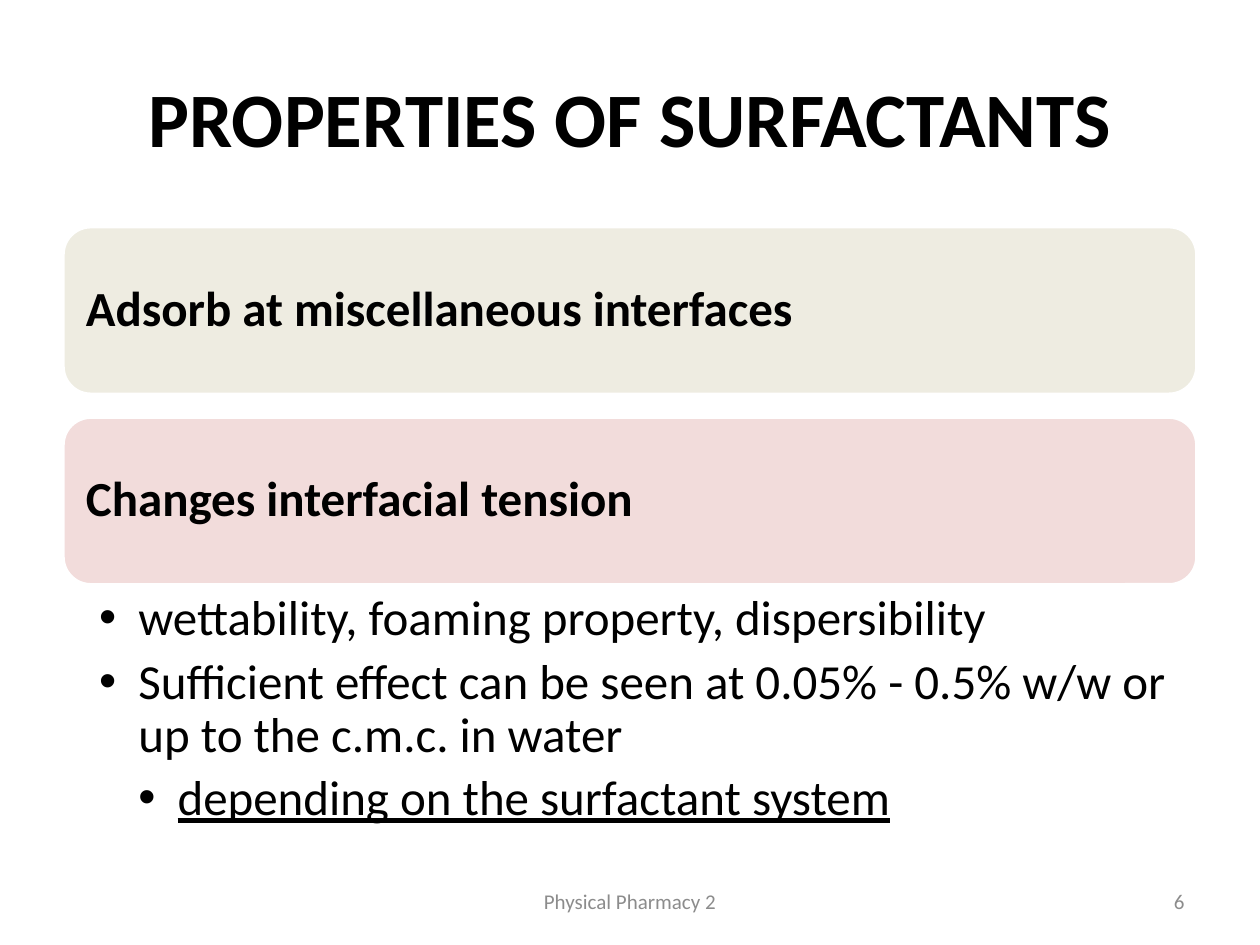
from lxml import etree
from pptx import Presentation
from pptx.dml.color import RGBColor
from pptx.enum.shapes import MSO_SHAPE
from pptx.enum.text import MSO_ANCHOR, MSO_AUTO_SIZE, PP_ALIGN
from pptx.oxml.ns import qn
from pptx.util import Cm, Pt

ROUND = MSO_SHAPE.ROUNDED_RECTANGLE
TOP, MIDDLE = MSO_ANCHOR.TOP, MSO_ANCHOR.MIDDLE
LEFT, CENTER, RIGHT = PP_ALIGN.LEFT, PP_ALIGN.CENTER, PP_ALIGN.RIGHT
NO_FIT = MSO_AUTO_SIZE.NONE

BLACK = RGBColor(0x00, 0x00, 0x00)
WHITE = RGBColor(0xFF, 0xFF, 0xFF)
GRAY = RGBColor(0x8C, 0x8C, 0x8C)
CREAM = RGBColor(0xEE, 0xEC, 0xE1)
PINK = RGBColor(0xF2, 0xDC, 0xDB)

FONT = "Calibri"
EDGE, WIDTH = 1.27, 22.86
CARD_TOP, CARD_STEP, CARD_TALL = 4.57, 3.84, 3.38
INDENT = 0.79

CARDS = [
    ("Adsorb at miscellaneous interfaces", CREAM),
    ("Changes interfacial tension", PINK),
]
POINTS = [
    (1, "wettability, foaming property, dispersibility", False),
    (1, "Sufficient effect can be seen at 0.05% - 0.5% w/w or "
        "up to the c.m.c. in water", False),
    (2, "depending on the surfactant system", True),
]


def place(shape, left, top, width, height):
    shape.left, shape.top = Cm(left), Cm(top)
    shape.width, shape.height = Cm(width), Cm(height)


def set_frame(frame, anchor, left=0.25, right=0.25, edge=0.13):
    frame.word_wrap = True
    frame.auto_size = NO_FIT
    frame.vertical_anchor = anchor
    frame.margin_left, frame.margin_right = Cm(left), Cm(right)
    frame.margin_top = frame.margin_bottom = Cm(edge)


def add_run(para, text, size, color=BLACK, bold=False, under=False):
    run = para.add_run()
    run.text = text
    font = run.font
    font.name, font.size = FONT, Pt(size)
    font.bold, font.underline = bold, under
    font.color.rgb = color


def add_title(slide, text):
    title = slide.shapes.title
    place(title, EDGE, 0.76, WIDTH, 3.18)
    set_frame(title.text_frame, MIDDLE)
    para = title.text_frame.paragraphs[0]
    para.alignment = CENTER
    add_run(para, text, 44, bold=True)


def add_card(slide, top, text, color):
    card = slide.shapes.add_shape(ROUND, Cm(EDGE), Cm(top), Cm(WIDTH), Cm(CARD_TALL))
    card.shadow.inherit = False
    card.fill.solid()
    card.fill.fore_color.rgb = color
    card.line.color.rgb = WHITE
    card.line.width = Pt(2)
    set_frame(card.text_frame, MIDDLE, 0.3, 0.3, 0.3)
    para = card.text_frame.paragraphs[0]
    para.alignment = LEFT
    para.line_spacing = 0.9
    add_run(para, text, 28, bold=True)


def set_bullet(para, level):
    para.level = level
    props = para._p.get_or_add_pPr()
    props.set("marL", str(Cm(INDENT * level)))
    props.set("indent", str(-Cm(INDENT)))
    etree.SubElement(props, qn("a:buFont")).set("typeface", "Arial")
    etree.SubElement(props, qn("a:buChar")).set("char", "•")


def add_list(slide, points):
    body = slide.placeholders[1]
    place(body, EDGE, 11.86, WIDTH, 5.05)
    frame = body.text_frame
    set_frame(frame, TOP, 0.73, 0.56, 0.1)
    for i, (level, text, under) in enumerate(points):
        para = frame.add_paragraph() if i else frame.paragraphs[0]
        set_bullet(para, level)
        para.line_spacing = 0.9
        para.space_before, para.space_after = Pt(0), Pt(6)
        add_run(para, text, 28, under=under)


def add_note(slide, left, width, text, align):
    box = slide.shapes.add_textbox(Cm(left), Cm(17.66), Cm(width), Cm(1.01))
    set_frame(box.text_frame, MIDDLE)
    para = box.text_frame.paragraphs[0]
    para.alignment = align
    add_run(para, text, 12, GRAY)


def main():
    deck = Presentation()
    deck.slide_width, deck.slide_height = Cm(25.4), Cm(19.05)
    slide = deck.slides.add_slide(deck.slide_layouts[1])
    add_title(slide, "PROPERTIES OF SURFACTANTS")
    for i, (text, color) in enumerate(CARDS):
        add_card(slide, CARD_TOP + i * CARD_STEP, text, color)
    add_list(slide, POINTS)
    add_note(slide, 8.68, 8.04, "Physical Pharmacy 2", CENTER)
    add_note(slide, 18.2, 5.93, "6", RIGHT)
    deck.save("out.pptx")


if __name__ == "__main__":
    main()
